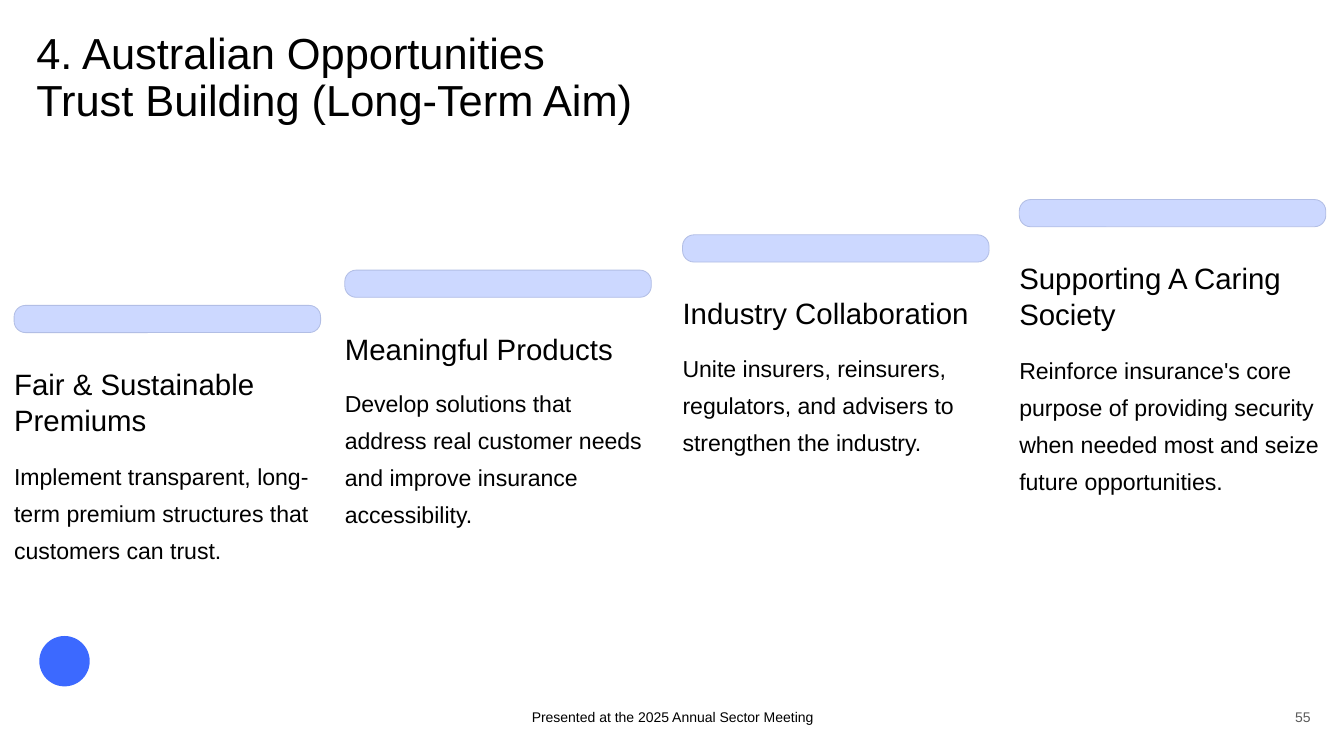
from pptx import Presentation
from pptx.dml.color import RGBColor
from pptx.enum import shapes, text
from pptx.util import Inches, Pt

BLACK = RGBColor(0x00, 0x00, 0x00)
GREY = RGBColor(0x5B, 0x5B, 0x5B)
BLUE = RGBColor(0x3C, 0x69, 0xFF)
PALE = RGBColor(0xCC, 0xD8, 0xFF)
EDGE = RGBColor(0xB2, 0xBE, 0xE5)

TITLE = dict(size=Pt(31), gap=0.9)
HEAD = dict(size=Pt(21), gap=Pt(26))
BODY = dict(size=Pt(16.5), gap=Pt(26.5))
FOOT = dict(size=Pt(10), anchor=text.MSO_ANCHOR.BOTTOM)

WIDE = 3.04
FIRST = 3.03  # top of the lowest bar
RISE = 0.35
LINE = 0.37  # each further heading line pushes the body down

# left edge, heading, heading lines, body
STEPS = [
    (0.14, "Fair & Sustainable Premiums", 2,
     "Implement transparent, long-term premium structures that customers can trust."),
    (3.42, "Meaningful Products", 1,
     "Develop solutions that address real customer needs and improve insurance accessibility."),
    (6.77, "Industry Collaboration", 1,
     "Unite insurers, reinsurers, regulators, and advisers to strengthen the industry."),
    (10.11, "Supporting A Caring Society", 2,
     "Reinforce insurance's core purpose of providing security when needed most "
     "and seize future opportunities."),
]


def add_text(slide, box, words, size, gap=None, color=BLACK,
             align=text.PP_ALIGN.LEFT, anchor=text.MSO_ANCHOR.TOP):
    frame = slide.shapes.add_textbox(*map(Inches, box)).text_frame
    form = dict(margin_left=0, margin_right=0, margin_top=0, margin_bottom=0,
                word_wrap=True, vertical_anchor=anchor)
    for key, value in form.items():
        setattr(frame, key, value)
    para = frame.paragraphs[0]
    para.text = words
    para.alignment = align
    para.line_spacing = gap
    for run in para.runs:
        run.font.name = "Arial"
        run.font.size = size
        run.font.color.rgb = color


def add_block(slide, kind, box, fill, edge=None):
    block = slide.shapes.add_shape(kind, *map(Inches, box))
    block.shadow.inherit = False
    block.fill.solid()
    block.fill.fore_color.rgb = fill
    if edge is None:
        block.line.fill.background()
    else:
        block.line.color.rgb = edge
        block.line.width = Pt(0.6)
    return block


def add_step(slide, left, top, head, lines, body):
    bar = add_block(slide, shapes.MSO_SHAPE.ROUNDED_RECTANGLE,
                    (left, top, WIDE, 0.27), PALE, EDGE)
    bar.adjustments[0] = 0.42
    add_text(slide, (left, top + 0.59, WIDE, 0.42 * lines), head, **HEAD)
    add_text(slide, (left, top + 0.72 + LINE * lines, WIDE, 1.3), body, **BODY)


def main():
    deck = Presentation()
    deck.slide_width, deck.slide_height = Inches(13.33), Inches(7.5)
    slide = deck.slides.add_slide(deck.slide_layouts[6])

    add_block(slide, shapes.MSO_SHAPE.OVAL, (0.39, 6.31, 0.5, 0.5), BLUE)
    add_text(slide, (0.36, 0.32, 12.18, 1.09),
             "4. Australian Opportunities\nTrust Building (Long-Term Aim)", **TITLE)
    add_text(slide, (12.54, 7, 0.46, 0.2), "55", color=GREY,
             align=text.PP_ALIGN.RIGHT, **FOOT)
    add_text(slide, (4.42, 7, 4.5, 0.2), "Presented at the 2025 Annual Sector Meeting",
             align=text.PP_ALIGN.CENTER, **FOOT)
    for rank, (left, head, lines, body) in enumerate(STEPS):
        add_step(slide, left, FIRST - RISE * rank, head, lines, body)

    deck.save("out.pptx")


if __name__ == "__main__":
    main()
